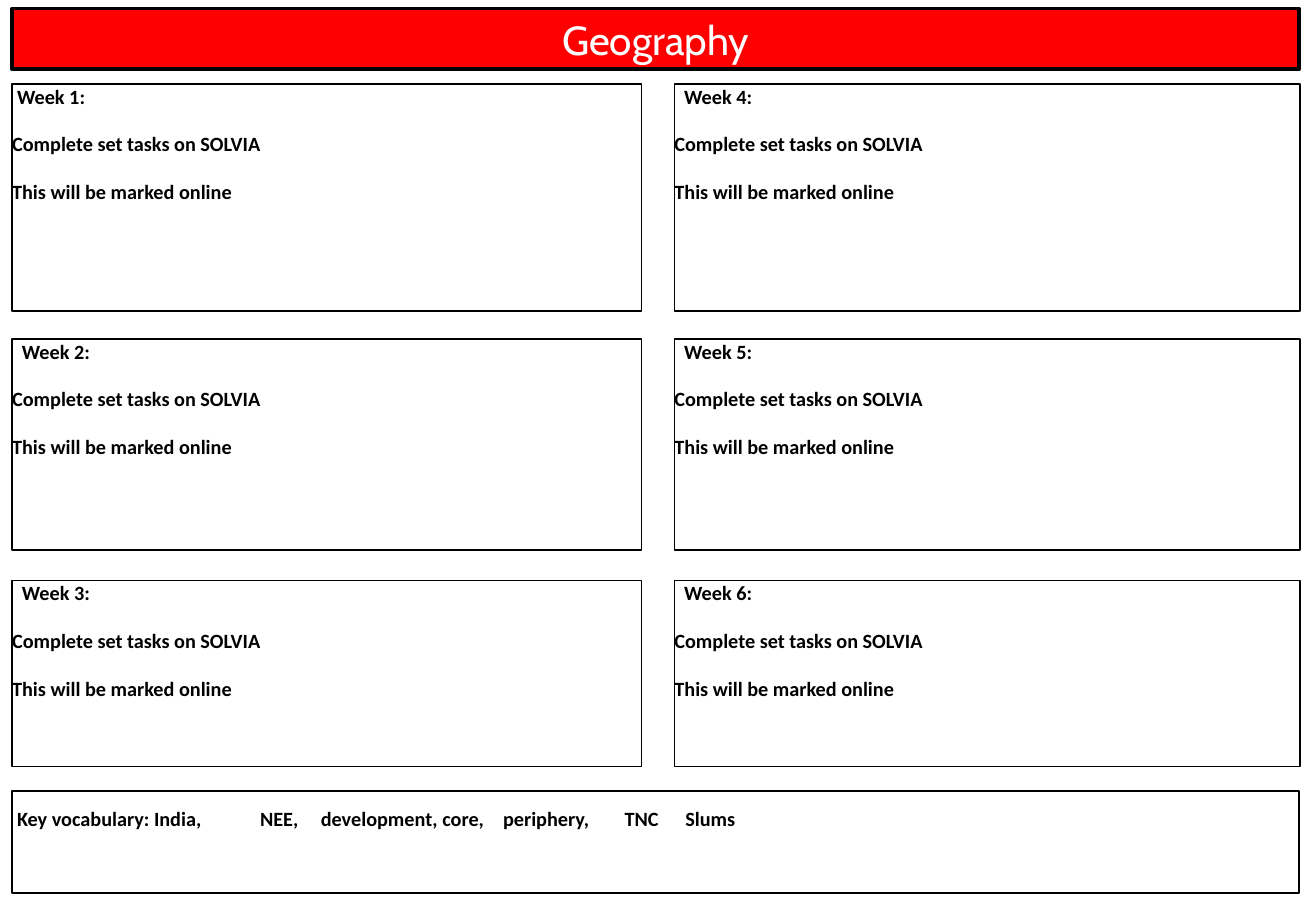
from pptx import Presentation
from pptx.dml.color import RGBColor
from pptx.enum.shapes import MSO_SHAPE
from pptx.enum.text import MSO_ANCHOR, MSO_AUTO_SIZE, PP_ALIGN
from pptx.oxml.ns import qn
from pptx.util import Inches, Pt
from lxml import etree

RECT = MSO_SHAPE.RECTANGLE
TOP, MIDDLE = MSO_ANCHOR.TOP, MSO_ANCHOR.MIDDLE
LEFT, CENTER = PP_ALIGN.LEFT, PP_ALIGN.CENTER
NO_FIT = MSO_AUTO_SIZE.NONE
BLACK = RGBColor(0, 0, 0)
WHITE = RGBColor(255, 255, 255)
RED = RGBColor(255, 0, 0)

EDGE, FULL_WIDTH = 0.1, 10.59
COLUMNS = [(EDGE, 5.18), (5.55, 5.15)]
ROWS = [(0.69, 1.87), (2.79, 1.74), (4.78, 1.53)]
TASKS = ["Complete set tasks on SOLVIA", "This will be marked online"]
VOCABULARY = ["Key vocabulary: India,", "NEE,", "development,", "core,",
              "periphery,", "TNC", "Slums"]
VOCABULARY_TABS = [2, 3, 4.96, 6, 7.96, 8.96]


def apply(target, values):
    for name, value in values.items():
        setattr(target, name, value)


class Planner:
    title_font = {"name": "Cabin", "size": Pt(24), "bold": False}
    body_font = {"name": "Calibri", "size": Pt(12), "bold": True}

    def __init__(self, prs):
        self.s = prs.slides.add_slide(prs.slide_layouts[5])

    def outline(self, sp, weight):
        sp.line.color.rgb = BLACK
        sp.line.width = Pt(weight)

    def add_text(self, p, text, font, color):
        r = p.add_run()
        r.text = text
        apply(r.font, font)
        r.font.color.rgb = color

    def title(self, text, left, top, width, height):
        sp = self.s.shapes.title
        apply(sp, {"left": Inches(left), "top": Inches(top),
                   "width": Inches(width), "height": Inches(height)})
        sp.fill.solid()
        sp.fill.fore_color.rgb = RED
        self.outline(sp, 2.25)
        tf = sp.text_frame
        apply(tf, {"word_wrap": True, "auto_size": NO_FIT,
                   "vertical_anchor": MIDDLE})
        p = tf.paragraphs[0]
        p.alignment = CENTER
        self.add_text(p, text, self.title_font, WHITE)

    def box(self, lines, left, top, width, height,
            margin_left=0, margin_top=0, indent=0, tabs=()):
        sp = self.s.shapes.add_shape(RECT, Inches(left), Inches(top),
                                     Inches(width), Inches(height))
        sp.shadow.inherit = False
        sp.fill.background()
        self.outline(sp, 1)
        tf = sp.text_frame
        apply(tf, {"word_wrap": True, "vertical_anchor": TOP,
                   "margin_left": Inches(margin_left), "margin_right": 0,
                   "margin_top": Inches(margin_top), "margin_bottom": 0})
        for i, line in enumerate(lines):
            p = tf.add_paragraph() if i else tf.paragraphs[0]
            p.alignment = LEFT
            if i:
                p.space_before = Pt(13.9)
            else:
                self.first_line(p, indent, tabs)
            self.add_text(p, line, self.body_font, BLACK)

    def first_line(self, p, indent, tabs):
        pPr = p._p.get_or_add_pPr()
        pPr.set("indent", str(Inches(indent)))
        if tabs:
            tab_list = etree.SubElement(pPr, qn("a:tabLst"))
            for stop in tabs:
                etree.SubElement(tab_list, qn("a:tab"),
                                 pos=str(Inches(stop)), algn="l")


def main():
    prs = Presentation()
    prs.slide_width = Inches(10.83)
    prs.slide_height = Inches(7.5)
    planner = Planner(prs)
    planner.title("Geography", EDGE, 0.07, FULL_WIDTH, 0.5)
    week = 0
    for left, width in COLUMNS:
        for top, height in ROWS:
            week += 1
            planner.box([f"Week {week}:"] + TASKS, left, top, width, height,
                        indent=0.04 if week == 1 else 0.08)
    planner.box(["\t".join(VOCABULARY)], EDGE, 6.51, FULL_WIDTH, 0.84,
                margin_left=0.04, margin_top=0.13, tabs=VOCABULARY_TABS)
    prs.save("out.pptx")


if __name__ == "__main__":
    main()
